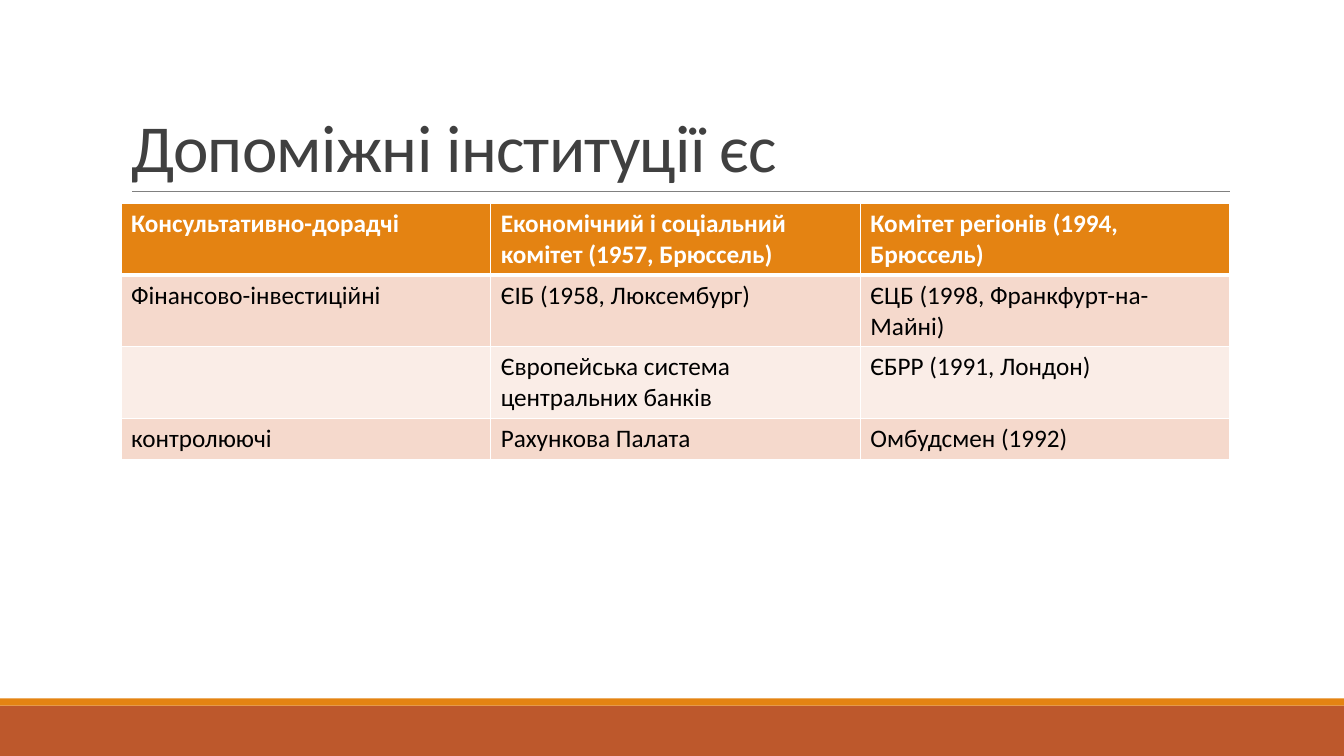
from lxml.etree import SubElement
from pptx import Presentation
from pptx.dml.color import RGBColor as Color
from pptx.enum.shapes import MSO_CONNECTOR as Connector, MSO_SHAPE as Preset
from pptx.enum.text import MSO_ANCHOR as Anchor, MSO_AUTO_SIZE as AutoSize, PP_ALIGN as Align
from pptx.oxml.ns import qn
from pptx.util import Inches, Pt

WIDTH, HEIGHT = 13.33, 7.5
LEFT, CONTENT_WIDTH = 1.2, 11
INSET = 0.11
ROW_HEIGHT = 0.41
COLORS = {
    "header": "E48312",
    "footer": "BD582C",
    "odd": "F5D9CC",
    "even": "FAEDE7",
    "border": "FFFFFF",
    "rule": "808080",
    "title": "404040",
    "text": "000000",
}
TITLE_FORMAT = {"size": Pt(48), "name": "Calibri", "bold": False}
CELL_FORMAT = {"size": Pt(18), "name": "Calibri"}
ROWS = [
    ["Консультативно-дорадчі", "Економічний і соціальний комітет (1957, Брюссель)",
     "Комітет регіонів (1994, Брюссель)"],
    ["Фінансово-інвестиційні", "ЄІБ (1958, Люксембург)", "ЄЦБ (1998, Франкфурт-на-Майні)"],
    ["", "Європейська система центральних банків", "ЄБРР (1991, Лондон)"],
    ["контролюючі", "Рахункова Палата", "Омбудсмен (1992)"],
]


def color(name):
    return Color.from_string(COLORS[name])


def fill_solid(target, name):
    target.fill.solid()
    target.fill.fore_color.rgb = color(name)


def format_font(font, values, color_name):
    for attribute, value in values.items():
        setattr(font, attribute, value)
    font.color.rgb = color(color_name)


def add_bands(slide, box):
    left, top, width, height = box
    stripe = 0.07
    for name, y, depth in (("footer", top + stripe, height - stripe), ("header", top, stripe)):
        band = slide.shapes.add_shape(
            Preset.RECTANGLE, Inches(left), Inches(y), Inches(width), Inches(depth))
        band.shadow.inherit = False
        fill_solid(band, name)
        band.line.fill.background()


def add_title(slide, box, text):
    left, top, width, height = box
    bottom = Inches(top + height)
    rule = slide.shapes.add_connector(
        Connector.STRAIGHT, Inches(left + INSET), bottom, Inches(left + width), bottom)
    rule.line.color.rgb = color("rule")
    rule.line.width = Pt(0.5)
    SubElement(rule._element.spPr, qn("a:effectLst"))

    title = slide.shapes.title
    title.left, title.top, title.width, title.height = map(Inches, box)
    frame = title.text_frame
    frame.text = text
    frame.word_wrap = True
    frame.auto_size = AutoSize.NONE
    frame.vertical_anchor = Anchor.BOTTOM
    paragraph = frame.paragraphs[0]
    paragraph.alignment = Align.LEFT
    paragraph.line_spacing = 0.85
    run = paragraph.runs[0]
    format_font(run.font, TITLE_FORMAT, "title")
    run.font._element.set("spc", "-50")


def add_borders(cell, widths):
    properties = cell._tc.get_or_add_tcPr()
    for index, (side, points) in enumerate(widths.items()):
        line = SubElement(properties, qn(f"a:ln{side}"), w=str(Pt(points)))
        fill = SubElement(line, qn("a:solidFill"))
        SubElement(fill, qn("a:srgbClr"), val=COLORS["border"])
        properties.remove(line)
        properties.insert(index, line)


def add_institutions(slide, box, rows):
    frame = slide.shapes.add_table(len(rows), len(rows[0]), *map(Inches, box))
    table = frame.table
    table.horz_banding = False
    for row_index, values in enumerate(rows):
        is_header = row_index == 0
        fill_name = "header" if is_header else ("even", "odd")[row_index % 2]
        widths = {"L": 1, "R": 1, "T": 3 if row_index == 1 else 1, "B": 3 if is_header else 1}
        for column_index, value in enumerate(values):
            cell = table.cell(row_index, column_index)
            cell.text = value
            fill_solid(cell, fill_name)
            add_borders(cell, widths)
            format_font(cell.text_frame.paragraphs[0].font,
                        {**CELL_FORMAT, "bold": is_header},
                        "border" if is_header else "text")
            for run in cell.text_frame.paragraphs[0].runs:
                format_font(run.font, {**CELL_FORMAT, "bold": is_header},
                            "border" if is_header else "text")


def main():
    presentation = Presentation()
    presentation.slide_width = Inches(WIDTH)
    presentation.slide_height = Inches(HEIGHT)
    slide = presentation.slides.add_slide(presentation.slide_layouts[5])
    add_bands(slide, (0, 6.93, WIDTH, HEIGHT - 6.93))
    add_title(slide, (LEFT, 0.31, CONTENT_WIDTH, 1.59), "Допоміжні інституції єс")
    add_institutions(slide, (LEFT, 2.02, CONTENT_WIDTH, ROW_HEIGHT * len(ROWS)), ROWS)
    presentation.save("out.pptx")


if __name__ == "__main__":
    main()
